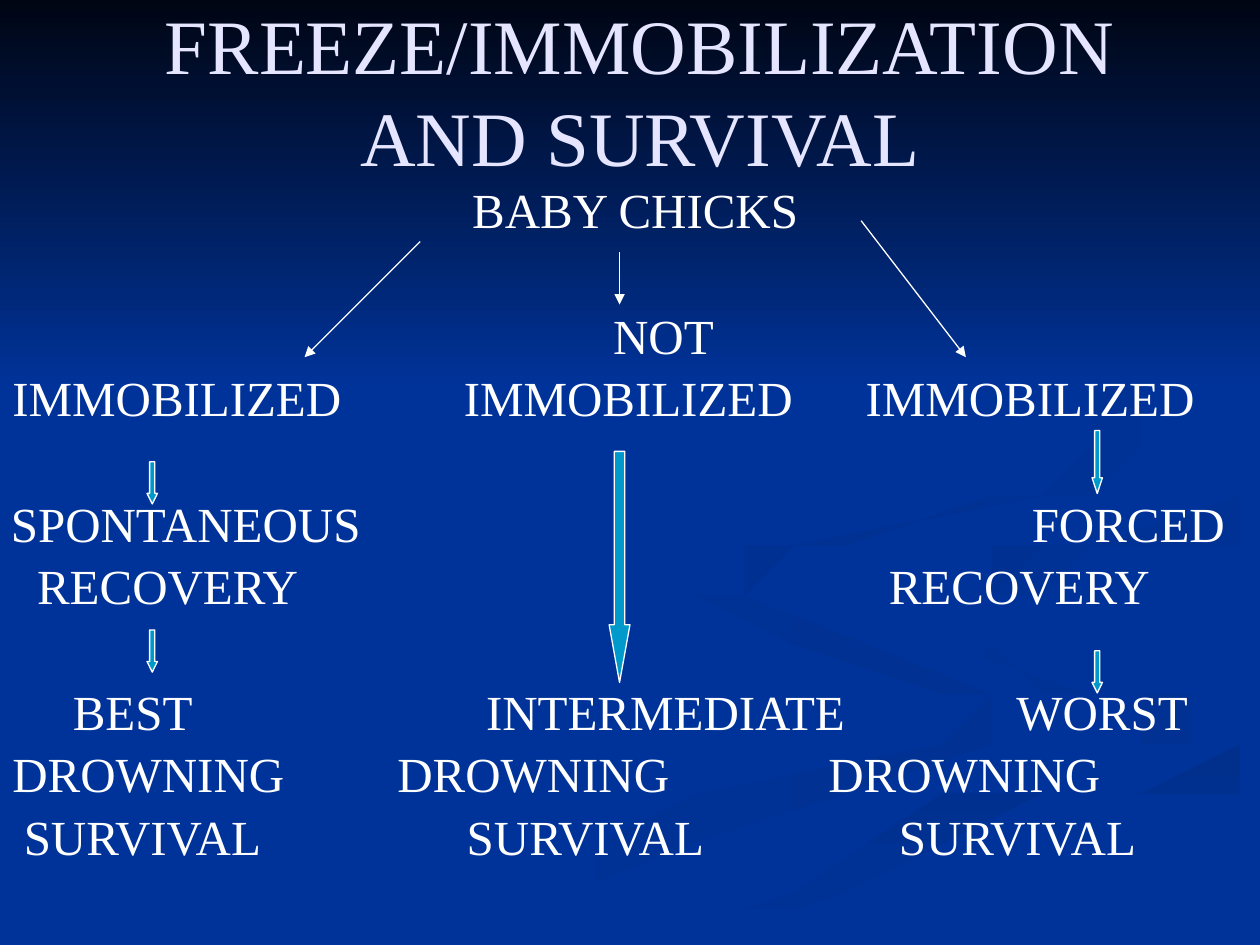
from lxml import etree
from pptx import Presentation
from pptx import util as u
from pptx.dml.color import RGBColor
from pptx.enum import shapes, text
from pptx.oxml import ns

BLUE, WHITE = "003399", "FFFFFF"
FONT = "Times New Roman"
TITLE = ("FREEZE/IMMOBILIZATION", "AND SURVIVAL")
ROWS = [
    (0, [(9.52, "BABY CHICKS")]),
    (1, [(12.36, "NOT")]),
    (0, [(0.25, "IMMOBILIZED"), (9.35, "IMMOBILIZED"), (17.45, "IMMOBILIZED")]),
    (1, [(0.22, "SPONTANEOUS"), (20.8, "FORCED")]),
    (0, [(0.75, "RECOVERY"), (17.92, "RECOVERY")]),
    (1, [(1.47, "BEST"), (9.8, "INTERMEDIATE"), (20.49, "WORST")]),
    (0, [(0.25, "DROWNING"), (8.01, "DROWNING"), (16.7, "DROWNING")]),
    (0, [(0.48, "SURVIVAL"), (9.41, "SURVIVAL"), (18.12, "SURVIVAL")]),
]
BRANCHES = [(8.47, 4.87, 6.14, 7.2), (12.49, 5.08, 12.49, 6.14), (17.36, 4.45, 19.47, 7.2)]
ARROW_COLUMNS = [
    (3.07, 0.21, [(9.31, 0.85), (12.7, 0.85)]),
    (22.12, 0.21, [(8.68, 1.27), (13.12, 0.85)]),
    (12.49, 0.42, [(9.1, 4.66)]),
]
SWIRLS = [
    ((BLUE, "003193", 0), [
        (19.8, 14), (14.8, 12.2), (14.6, 11.7), (14.5, 12), (15.5, 12.6), (19.1, 13.8),
        (19.9, 14.5), (18.8, 15.2), (13.7, 16.5), (7.6, 19), (9.2, 19), (14.3, 16.9),
        (19.8, 15.4), (20.3, 14.8)]),
    ((BLUE, "003193", 45), [
        (24, 14.5), (22.1, 13.5), (19.3, 12.6), (18.4, 11.8), (18.7, 12.4), (20.7, 13.5),
        (22.9, 14.1), (23.3, 14.8), (22.7, 15.4), (23.7, 15)]),
    (("002F8C", BLUE, 90), [
        (12.8, 19), (14.5, 19), (17, 17.8), (20.9, 16.5), (25.35, 15.5), (25.35, 14.8),
        (22.9, 15.5), (19.4, 16.4), (16, 17.6)]),
    (("003091", BLUE, 45), [
        (19.8, 11.7), (20.1, 12.2), (21, 12.6), (20.5, 12.1), (20.8, 11.6), (22.3, 11.1),
        (25.35, 10.7), (25.35, 10.2), (22, 10.8), (20.3, 11.2)]),
    (("002F8E", BLUE, 45), [
        (17.3, 10.9), (20, 10.5), (21.7, 9.9), (22.6, 9.2), (22.6, 8.2), (21.9, 7.4),
        (19.4, 5.9), (21.5, 7.1), (22.5, 8.1), (22.4, 9), (21.4, 9.6), (16.5, 10.7),
        (15, 11.2), (14.7, 11.8), (15, 12.3), (15.8, 12.7), (15.1, 11.9), (15.6, 11.4)]),
]


def rgb(value):
    return RGBColor.from_string(value)


def paint(sp, colors, line=None):
    sp.shadow.inherit = False
    if len(colors) == 1:
        sp.fill.solid()
        sp.fill.fore_color.rgb = rgb(colors[0])
    else:
        start, end, angle = colors
        sp.fill.gradient()
        sp.fill.gradient_angle = (360 - angle) % 360
        for stop, color in zip(sp.fill.gradient_stops, (start, end)):
            stop.color.rgb = rgb(color)
    if line:
        sp.line.color.rgb = rgb(line)
        sp.line.width = u.Pt(0.75)
    else:
        sp.line.fill.background()


def add_box(s, place, anchor):
    tf = s.shapes.add_textbox(*map(u.Cm, place)).text_frame
    layout = dict(word_wrap=True, vertical_anchor=anchor, margin_left=0, margin_right=0,
                  margin_top=0, margin_bottom=0)
    for name, value in layout.items():
        setattr(tf, name, value)
    return tf


def add_line(tf, index, words, size, color, **formats):
    p = tf.add_paragraph() if index else tf.paragraphs[0]
    for name, value in formats.items():
        setattr(p, name, value)
    r = p.add_run()
    r.text = words
    r.font.name, r.font.size = FONT, u.Pt(size)
    r.font.color.rgb = rgb(color)
    return p


def add_tabs(p, stops):
    tabs = etree.SubElement(p._p.get_or_add_pPr(), ns.qn("a:tabLst"))
    for stop in stops:
        etree.SubElement(tabs, ns.qn("a:tab"), pos=str(u.Cm(stop)), algn="l")


def main():
    prs = Presentation()
    prs.slide_width, prs.slide_height = u.Cm(25.4), u.Cm(19.05)
    s = prs.slides.add_slide(prs.slide_layouts[6])
    s.background.fill.solid()
    s.background.fill.fore_color.rgb = rgb(BLUE)

    for colors, points in SWIRLS:
        outline = s.shapes.build_freeform(*points[0], scale=u.Cm(1))
        outline.add_line_segments(points[1:], close=True)
        paint(outline.convert_to_shape(), colors)
    sky = s.shapes.add_shape(shapes.MSO_SHAPE.RECTANGLE, 0, 0, prs.slide_width, u.Cm(7.82))
    paint(sky, ("000514", BLUE, 90))

    tf = add_box(s, (0.84, 0, 24.13, 3.61), text.MSO_ANCHOR.MIDDLE)
    for i, words in enumerate(TITLE):
        add_line(tf, i, words, 44, "E5E5FF", alignment=text.PP_ALIGN.CENTER,
                 line_spacing=u.Pt(53))

    pitch = u.Pt(35.8)
    tf = add_box(s, (0, 3.55, 25.4, 15.5), text.MSO_ANCHOR.TOP)
    for i, (gap, cells) in enumerate(ROWS):
        words = "".join("\t" + word for _, word in cells)
        p = add_line(tf, i, words, 28, WHITE, line_spacing=pitch, space_before=gap * pitch)
        add_tabs(p, [x for x, _ in cells])

    for ends in BRANCHES:
        c = s.shapes.add_connector(shapes.MSO_CONNECTOR.STRAIGHT, *map(u.Cm, ends))
        c.line.color.rgb = rgb(WHITE)
        c.line.width = u.Pt(0.75)
        etree.SubElement(c.line._get_or_add_ln(), ns.qn("a:tailEnd"), type="triangle")
        etree.SubElement(c._element.spPr, ns.qn("a:effectLst"))

    for center, width, arrows in ARROW_COLUMNS:
        for top, height in arrows:
            place = (center - width / 2, top, width, height)
            sp = s.shapes.add_shape(shapes.MSO_SHAPE.DOWN_ARROW, *map(u.Cm, place))
            sp.adjustments[0] = 0.5
            sp.adjustments[1] = height / width / 4
            paint(sp, ("0099CC",), WHITE)

    prs.save("out.pptx")


if __name__ == "__main__":
    main()
